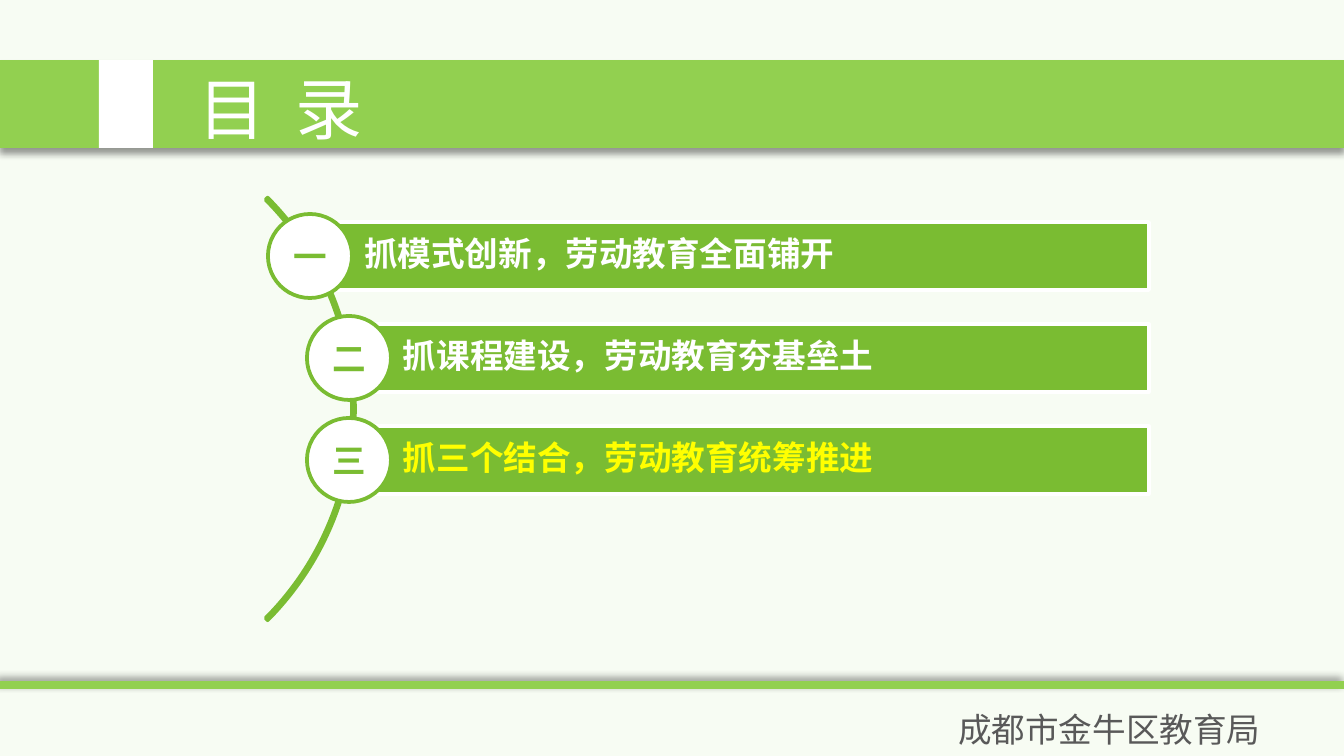
from dataclasses import dataclass

from lxml.etree import SubElement
from pptx import Presentation
from pptx.dml.color import RGBColor
from pptx.enum.shapes import MSO_CONNECTOR as Connector, MSO_SHAPE as Shape
from pptx.enum.text import MSO_ANCHOR as Anchor, MSO_AUTO_SIZE as AutoSize, PP_ALIGN as Align
from pptx.oxml.ns import qn
from pptx.util import Pt

EMU_PER_PX = 6804
SLIDE_WIDTH, SLIDE_HEIGHT = 1344, 756


@dataclass(frozen=True)
class Theme:
    background: str = "F7FCF3"
    band: str = "92D050"
    accent: str = "7ABC32"
    white: str = "FFFFFF"
    highlight: str = "FFFF00"
    footer: str = "595959"
    title_font: str = "Noto Sans CJK JP"
    body_font: str = "Noto Sans CJK SC"
    title_size: int = 36
    body_size: int = 18
    outline: float = 2
    rule: float = 4.5


THEME = Theme()
ENTRIES = [
    ("一", "抓模式创新，劳动教育全面铺开", 0, THEME.white),
    ("二", "抓课程建设，劳动教育夯基垒土", 39, THEME.white),
    ("三", "抓三个结合，劳动教育统筹推进", 39, THEME.highlight),
]


def px(*lengths):
    return [length * EMU_PER_PX for length in lengths]


def color(value):
    return RGBColor.from_string(value)


def add_shadow(shape, direction):
    effects = SubElement(shape._element.spPr, qn("a:effectLst"))
    shadow = SubElement(effects, qn("a:outerShdw"), blurRad=str(Pt(4)), dist=str(Pt(3)),
                        dir=str(direction * 60000), algn="t", rotWithShape="0")
    black = SubElement(shadow, qn("a:srgbClr"), val="000000")
    SubElement(black, qn("a:alpha"), val="40000")


def add_filled(slide, kind, box, fill, line=None):
    shape = slide.shapes.add_shape(kind, *px(*box))
    shape.fill.solid()
    shape.fill.fore_color.rgb = color(fill)
    if line:
        shape.line.color.rgb = color(line)
        shape.line.width = Pt(THEME.outline)
    else:
        shape.line.fill.background()
    shape.shadow.inherit = False
    return shape


def write(shape, text, fill, font=THEME.body_font, size=THEME.body_size, bold=False,
          align=Align.LEFT, anchor=Anchor.MIDDLE, insets=(13, 7), wrap=False,
          line_spacing=None, letter_spacing=0):
    """Fill a shape with one paragraph; insets are (left, others) in px."""
    frame = shape.text_frame
    frame.auto_size = AutoSize.NONE
    frame.word_wrap = wrap
    frame.vertical_anchor = anchor
    frame.margin_left, frame.margin_top = px(*insets)
    frame.margin_right = frame.margin_bottom = frame.margin_top
    paragraph = frame.paragraphs[0]
    paragraph.alignment = align
    paragraph.line_spacing = line_spacing
    run = paragraph.add_run()
    run.text = text
    run.font.name = font
    run.font.size = Pt(size)
    run.font.bold = bold
    run.font.color.rgb = color(fill)
    properties = run._r.get_or_add_rPr()
    SubElement(properties, qn("a:ea"), typeface=font)
    if letter_spacing:
        properties.set("spc", str(letter_spacing * 100))


def add_header(slide, left, top, width, height):
    band = slide.shapes.add_shape(Shape.RECTANGLE, *px(left, top, width, height))
    band.fill.solid()
    band.fill.fore_color.rgb = color(THEME.band)
    band.line.fill.background()
    add_shadow(band, 90)
    add_filled(slide, Shape.RECTANGLE, (left + 99, top, 54, height), THEME.white)

    title = slide.shapes.title
    title.left, title.top, title.width, title.height = px(left + 185, top, 205, 95)
    write(title, "目 录", THEME.white, font=THEME.title_font, size=THEME.title_size,
          letter_spacing=4)
    slide.shapes._spTree.append(title._element)  # in front of the band


def add_footer(slide, left, top, width):
    rule = slide.shapes.add_connector(Connector.STRAIGHT, *px(left, top, left + width, top))
    rule.line.color.rgb = color(THEME.band)
    rule.line.width = Pt(THEME.rule)
    add_shadow(rule, 225)
    label = slide.shapes.add_textbox(*px(left + width - 399, top + 17, 332, 54))
    write(label, "成都市金牛区教育局", THEME.footer)


def add_entry(slide, left, top, width, height, number, text, fill):
    """Place a bar in the box, with a numbered circle centred on its left edge."""
    bar = add_filled(slide, Shape.RECTANGLE, (left, top, width, height),
                     THEME.accent, THEME.white)
    write(bar, text, fill, bold=True, insets=(54, 7), wrap=True, line_spacing=0.9)
    diameter = 84
    circle_box = (left - diameter // 2, top + (height - diameter) // 2, diameter, diameter)
    circle = add_filled(slide, Shape.OVAL, circle_box, THEME.white, THEME.accent)
    write(circle, number, THEME.accent, bold=True, align=Align.CENTER, insets=(0, 0))


def add_agenda(slide, left, top, width, bar_height=68, pitch=102):
    arc = add_filled(slide, Shape.BLOCK_ARC, (left - 552, top - 112, 597, 598),
                     THEME.accent, THEME.accent)
    for index, value in enumerate((189, 27, 0.005)):  # 315° to 45°, thin band
        arc.adjustments[index] = value
    for index, (number, text, indent, fill) in enumerate(ENTRIES):
        add_entry(slide, left + indent, top + index * pitch, width - indent, bar_height,
                  number, text, fill)


def main():
    presentation = Presentation()
    presentation.slide_width, presentation.slide_height = px(SLIDE_WIDTH, SLIDE_HEIGHT)
    slide = presentation.slides.add_slide(presentation.slide_layouts[5])
    slide.background.fill.solid()
    slide.background.fill.fore_color.rgb = color(THEME.background)
    add_header(slide, 0, 60, SLIDE_WIDTH, 88)
    add_footer(slide, 0, 685, SLIDE_WIDTH)
    add_agenda(slide, 310, 222, 839)
    presentation.save("out.pptx")


if __name__ == "__main__":
    main()
